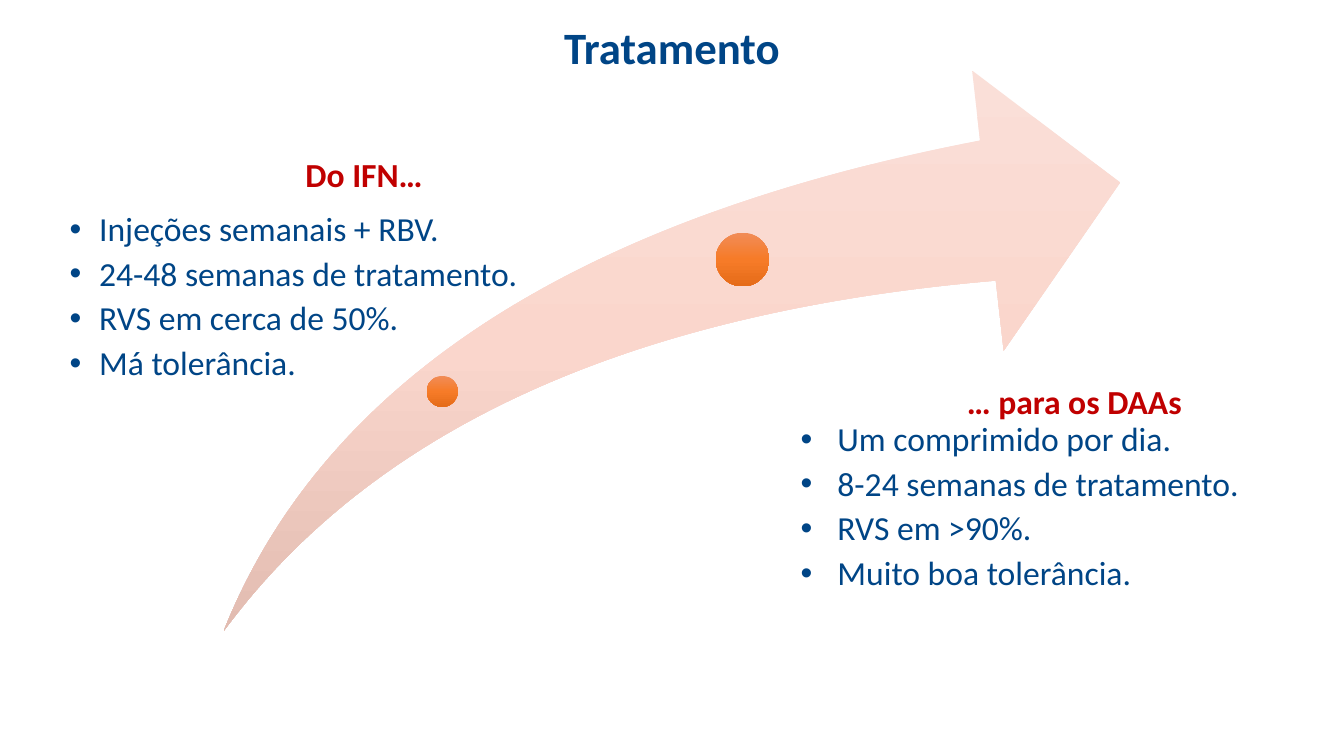
"""Builds the slide on the move from IFN to DAAs in treatment."""
from copy import deepcopy
from dataclasses import dataclass

from pptx import Presentation
from pptx.dml.color import RGBColor
from pptx.enum.shapes import MSO_SHAPE
from pptx.enum.text import MSO_ANCHOR, MSO_AUTO_SIZE, PP_ALIGN
from pptx.oxml.ns import qn
from pptx.shapes.autoshape import Shape
from pptx.slide import Slide
from pptx.util import Emu, Inches, Pt

LEFT, CENTER, RIGHT = PP_ALIGN.LEFT, PP_ALIGN.CENTER, PP_ALIGN.RIGHT
TOP, MIDDLE, BOTTOM = MSO_ANCHOR.TOP, MSO_ANCHOR.MIDDLE, MSO_ANCHOR.BOTTOM
NO_AUTOFIT = MSO_AUTO_SIZE.NONE
SWOOSH, OVAL = MSO_SHAPE.SWOOSH_ARROW, MSO_SHAPE.OVAL

SLIDE_WIDTH, SLIDE_HEIGHT = Inches(13.333), Inches(7.5)
COLUMNS, ROWS = 160, 90
COMPARISON_LAYOUT = 4
FONT = "Calibri"
BLUE, RED = "004586", "C00000"
ARROW_TINTS = ("FADFD8", "FAD6CC", "E2BCB1")
MILESTONE_TINTS = ("F18C57", "F67B28", "E56C19")


@dataclass(frozen=True)
class Area:
    """A rectangle in grid columns and rows."""
    column: float
    row: float
    columns: float
    rows: float


@dataclass(frozen=True)
class TextBlock:
    """A placeholder's wording, place and format."""
    placeholder: int
    area: Area
    lines: tuple[str, ...]
    color: str = BLUE
    size: int = 24
    bold: bool = False
    align: PP_ALIGN = LEFT
    anchor: MSO_ANCHOR = TOP
    line_spacing: float = 0.9
    text_indent: float = 0
    hanging: float = 0


@dataclass(frozen=True)
class GradientShape:
    """A preset shape with a vertical three-tone gradient."""
    preset: MSO_SHAPE
    area: Area
    tints: tuple[str, str, str]
    adjustments: tuple[float, ...] = ()


TEXT_BLOCKS = (
    TextBlock(0, Area(8, 2, 144, 7.9), ("Tratamento",), size=32, bold=True,
              align=CENTER, anchor=MIDDLE),
    TextBlock(1, Area(8, 11.9, 70.7, 11.9), ("Do IFN…",), RED, bold=True,
              align=CENTER, anchor=BOTTOM),
    TextBlock(2, Area(0, 24.7, 78.7, 49.6),
              ("Injeções semanais + RBV.", "24-48 semanas de tratamento.",
               "RVS em cerca de 50%.", "Má tolerância."),
              text_indent=10.6, hanging=3.5),
    TextBlock(3, Area(80, 44.8, 61.9, 5.9), ("… para os DAAs",), RED, bold=True,
              align=RIGHT, anchor=BOTTOM, line_spacing=1.5),
    TextBlock(4, Area(94.1, 49.7, 61.9, 24.7),
              ("Um comprimido por dia.", "8-24 semanas de tratamento.",
               "RVS em >90%.", "Muito boa tolerância."),
              text_indent=4.4, hanging=4.4),
)

PROGRESS_SHAPES = (
    GradientShape(SWOOSH, Area(26.65, 8.4, 106.7, 66.7), ARROW_TINTS, (0.25, 0.25)),
    GradientShape(OVAL, Area(50.8, 44.75, 3.7, 3.7), MILESTONE_TINTS),
    GradientShape(OVAL, Area(85.2, 27.7, 6.4, 6.4), MILESTONE_TINTS),
)


def rgb(hex_color: str) -> RGBColor:
    """Turn a hex string into a colour."""
    return RGBColor.from_string(hex_color)


def across(columns: float) -> Emu:
    """Convert grid columns to a length."""
    return Emu(round(SLIDE_WIDTH * columns / COLUMNS))


def down(rows: float) -> Emu:
    """Convert grid rows to a length."""
    return Emu(round(SLIDE_HEIGHT * rows / ROWS))


def bounds(area: Area) -> tuple[Emu, Emu, Emu, Emu]:
    """Give left, top, width and height of an area."""
    return across(area.column), down(area.row), across(area.columns), down(area.rows)


def fill_text(slide: Slide, block: TextBlock) -> None:
    """Move a placeholder and write its formatted lines."""
    holder = slide.placeholders[block.placeholder]
    holder.left, holder.top, holder.width, holder.height = bounds(block.area)
    frame = holder.text_frame
    frame.text = "\n".join(block.lines)
    frame.word_wrap = True
    frame.auto_size = NO_AUTOFIT
    frame.vertical_anchor = block.anchor
    for position, paragraph in enumerate(frame.paragraphs):
        properties = paragraph._p.get_or_add_pPr()
        properties.set("marL", str(across(block.text_indent)))
        properties.set("indent", str(-across(block.hanging)))
        paragraph.alignment = block.align
        paragraph.line_spacing = block.line_spacing
        paragraph.space_before = Pt(6 if position else 0)
        paragraph.font.name = FONT
        paragraph.font.size = Pt(block.size)
        paragraph.font.bold = block.bold
        paragraph.font.color.rgb = rgb(block.color)


def paint_gradient(shape: Shape, tints: tuple[str, str, str]) -> None:
    """Fill a shape from top to bottom with evenly spaced tints."""
    shape.fill.gradient()
    shape.fill.gradient_angle = 270
    stop_list = shape.element.spPr.find(qn("a:gradFill")).find(qn("a:gsLst"))
    stop_list.append(deepcopy(stop_list[0]))
    for position, (stop, tint) in enumerate(zip(shape.fill.gradient_stops, tints)):
        stop.position = position / (len(tints) - 1)
        stop.color.rgb = rgb(tint)


def draw_shape(slide: Slide, item: GradientShape) -> None:
    """Draw a borderless gradient shape."""
    shape = slide.shapes.add_shape(item.preset, *bounds(item.area))
    for position, value in enumerate(item.adjustments):
        shape.adjustments[position] = value
    paint_gradient(shape, item.tints)
    shape.line.fill.background()
    shape.shadow.inherit = False


def main() -> None:
    """Build and save the presentation."""
    presentation = Presentation()
    presentation.slide_width, presentation.slide_height = SLIDE_WIDTH, SLIDE_HEIGHT
    slide = presentation.slides.add_slide(presentation.slide_layouts[COMPARISON_LAYOUT])
    for block in TEXT_BLOCKS:
        fill_text(slide, block)
    for item in PROGRESS_SHAPES:
        draw_shape(slide, item)
    presentation.save("out.pptx")


if __name__ == "__main__":
    main()
